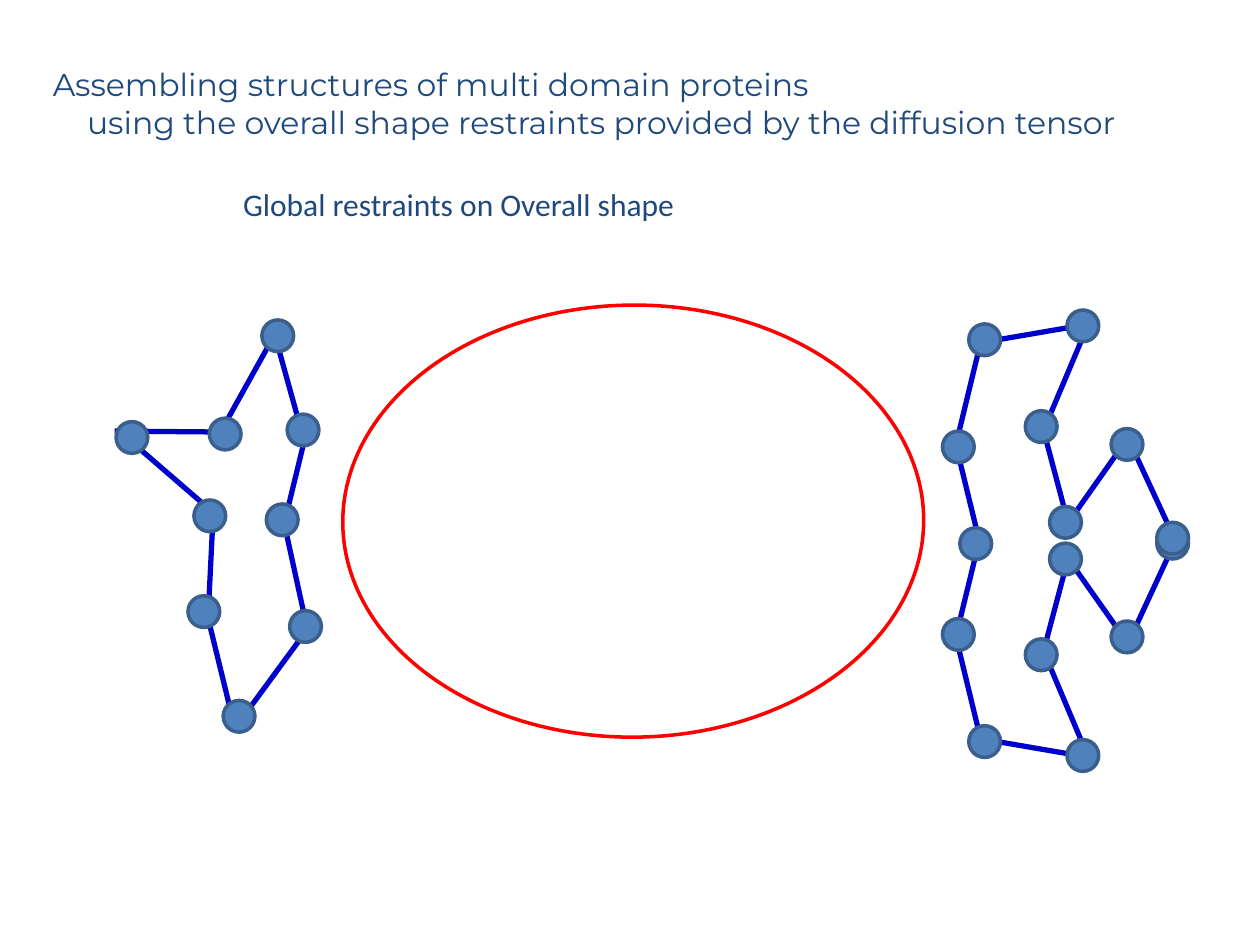
from pptx import Presentation
from pptx.dml.color import RGBColor
from pptx.enum.shapes import MSO_CONNECTOR, MSO_SHAPE
from pptx.enum.text import MSO_ANCHOR, MSO_AUTO_SIZE, PP_ALIGN
from pptx.oxml.ns import qn
from pptx.util import Cm, Pt
from lxml import etree

OVAL = MSO_SHAPE.OVAL
LINE = MSO_CONNECTOR.STRAIGHT
LEFT = PP_ALIGN.LEFT
TOP = MSO_ANCHOR.TOP
FIXED = MSO_AUTO_SIZE.NONE

NAVY = RGBColor(0x1F, 0x49, 0x7D)
BLUE = RGBColor(0x00, 0x00, 0xCC)
STEEL = RGBColor(0x4F, 0x81, 0xBD)
RIM = RGBColor(0x3A, 0x5F, 0x8C)
RED = RGBColor(0xFF, 0x00, 0x00)

BALL = 0.64

# Bond ends and ball centres in cm from the top left of the domain.
STAR_BONDS = [
    (2.49, 8.10, 3.81, 6.30), (3.86, 6.25, 3.38, 4.06),
    (3.38, 4.14, 3.91, 1.96), (3.78, 2.39, 3.18, 0.23),
    (3.25, 0.20, 2.16, 2.16), (2.24, 2.26, -0.03, 2.24),
    (0.20, 2.36, 1.91, 3.84), (1.96, 3.86, 1.85, 6.10),
    (1.80, 5.79, 2.34, 8.00),
]
STAR_BALLS = [
    (3.82, 6.18), (3.35, 4.03), (3.77, 2.22), (3.26, 0.32), (2.20, 2.30),
    (0.32, 2.37), (1.89, 3.95), (1.77, 5.88), (2.48, 7.99),
]

# Lower half of the twin domain, in cm from the left end of its axis.
HALF_BONDS = [
    (2.97, 4.37, 0.76, 3.99), (4.72, -0.05, 3.78, 1.98),
    (2.54, 0.33, 1.96, 2.51), (2.03, 2.21, 2.90, 4.27),
    (0.81, 4.17, 0.28, 1.98), (0.25, 2.01, 0.79, -0.20),
    (3.73, 2.06, 2.44, 0.23),
]
HALF_BALLS = [
    (4.64, 0.05), (1.99, 2.30), (0.32, 1.89), (2.83, 4.33),
    (3.72, 1.94), (2.48, 0.37), (0.85, 4.05),
]
HINGE = (0.67, 0.06)


def place(shape, box):
    shape.left, shape.top, shape.width, shape.height = map(Cm, box)


def write(shape, lines, font, indent=0):
    """Write one paragraph per line; lines after the first are indented."""
    frame = shape.text_frame
    frame.word_wrap = True
    frame.auto_size = FIXED
    frame.vertical_anchor = TOP
    for i, line in enumerate(lines):
        para = frame.add_paragraph() if i else frame.paragraphs[0]
        para.alignment = LEFT
        if i:
            para._p.get_or_add_pPr().set("marL", str(Cm(indent)))
        run = para.add_run()
        run.text = line
        run.font.name = font
        run.font.size = Pt(18)
        run.font.color.rgb = NAVY


def add_bond(group, x1, y1, x2, y2):
    bond = group.shapes.add_connector(LINE, Cm(x1), Cm(y1), Cm(x2), Cm(y2))
    bond.line.color.rgb = BLUE
    bond.line.width = Pt(3)
    etree.SubElement(bond._element.spPr, qn("a:effectLst"))


def add_ball(group, x, y):
    ball = group.shapes.add_shape(
        OVAL, Cm(x - BALL / 2), Cm(y - BALL / 2), Cm(BALL), Cm(BALL))
    ball.shadow.inherit = False
    ball.fill.solid()
    ball.fill.fore_color.rgb = STEEL
    ball.line.color.rgb = RIM
    ball.line.width = Pt(2)


def add_chain(slide, left, top, bonds, balls):
    """Draw one protein domain, with its balls in front of its bonds."""
    group = slide.shapes.add_group_shape()
    for x1, y1, x2, y2 in bonds:
        add_bond(group, left + x1, top + y1, left + x2, top + y2)
    for x, y in balls:
        add_ball(group, left + x, top + y)


def add_twin(slide, left, axis):
    """Draw the domain whose upper half mirrors its lower half."""
    bonds = HALF_BONDS + [(a, -b, c, -d) for a, b, c, d in HALF_BONDS]
    balls = HALF_BALLS + [(x, -y) for x, y in HALF_BALLS] + [HINGE]
    add_chain(slide, left, axis, bonds, balls)


def add_shell(slide, box):
    """Draw the outline of the overall shape."""
    shell = slide.shapes.add_shape(OVAL, *map(Cm, box))
    shell.rotation = 269.6
    shell.shadow.inherit = False
    shell.fill.background()
    shell.line.color.rgb = RED
    shell.line.width = Pt(2)


def add_title(slide, box):
    title = slide.shapes.title
    place(title, box)
    write(title, [
        "Assembling structures of multi domain proteins",
        "using the overall shape restraints provided by the diffusion tensor",
    ], "Montserrat", 0.69)


def add_label(slide, box):
    label = slide.shapes.add_textbox(*map(Cm, box))
    write(label, ["Global restraints on Overall shape"], "Calibri")


def main():
    deck = Presentation()
    deck.slide_width, deck.slide_height = Cm(25.4), Cm(19.05)
    slide = deck.slides.add_slide(deck.slide_layouts[5])
    add_title(slide, (0.81, 1.19, 25.12, 1.8))
    add_twin(slide, 19, 10.9)
    add_chain(slide, 2.34, 6.45, STAR_BONDS, STAR_BALLS)
    add_shell(slide, (8.41, 4.65, 8.71, 11.71))
    add_label(slide, (4.65, 3.61, 9.75, 1.8))
    deck.save("out.pptx")


if __name__ == "__main__":
    main()
